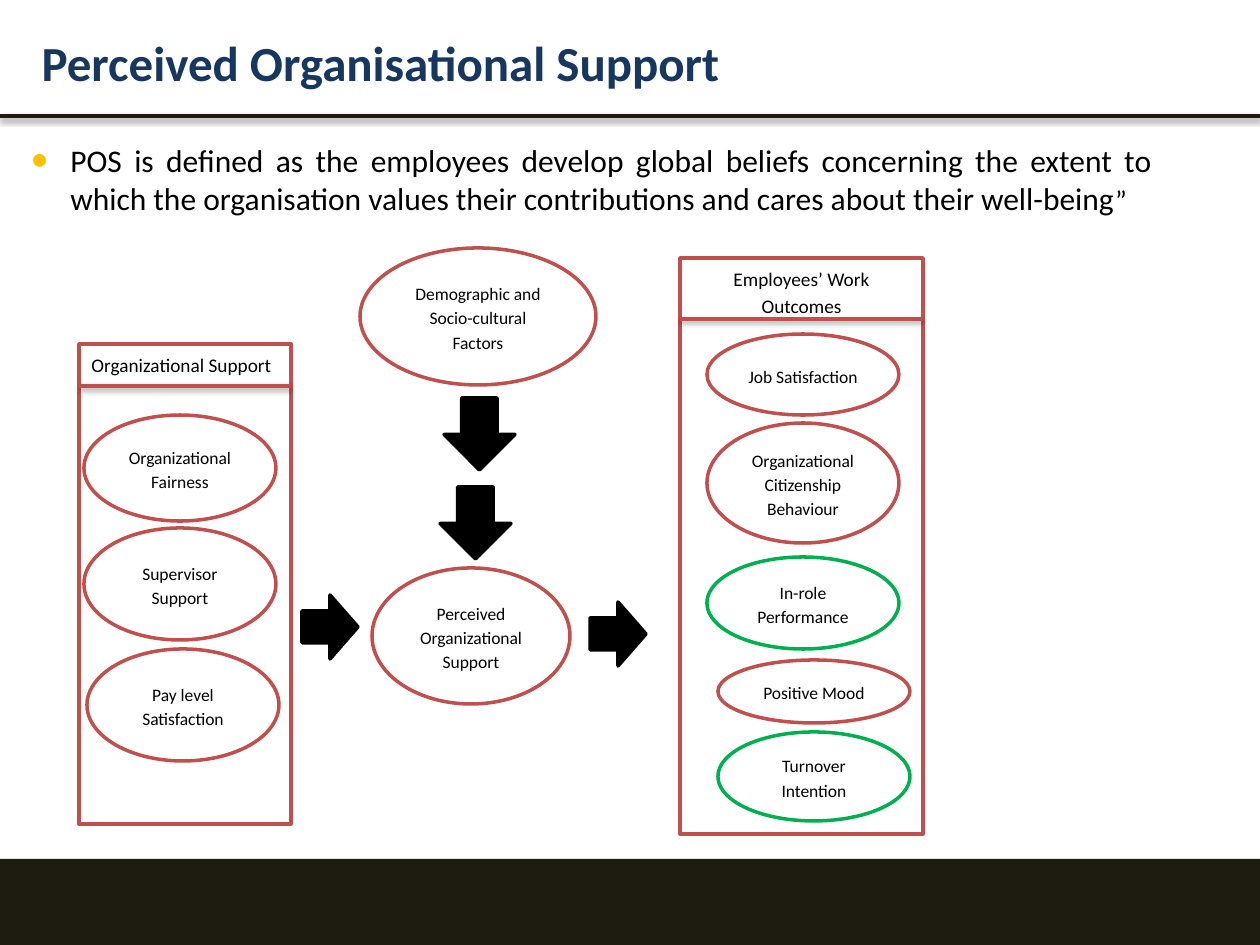
from dataclasses import dataclass

from lxml import etree
from pptx import Presentation
from pptx.dml.color import RGBColor
from pptx.enum.shapes import MSO_CONNECTOR, MSO_SHAPE
from pptx.enum.text import MSO_ANCHOR, PP_ALIGN
from pptx.oxml import parse_xml
from pptx.oxml.ns import nsdecls, qn
from pptx.util import Pt

RECT, OVAL = MSO_SHAPE.RECTANGLE, MSO_SHAPE.OVAL
RIGHT, DOWN = MSO_SHAPE.RIGHT_ARROW, MSO_SHAPE.DOWN_ARROW
STRAIGHT = MSO_CONNECTOR.STRAIGHT
TOP, MIDDLE = MSO_ANCHOR.TOP, MSO_ANCHOR.MIDDLE
LEFT, CENTER, JUSTIFY = PP_ALIGN.LEFT, PP_ALIGN.CENTER, PP_ALIGN.JUSTIFY
EMU_PER_PX = 914400 / 126


@dataclass(frozen=True)
class Theme:
    font: str = "Calibri"
    navy: str = "17375E"
    dark: str = "1E1C11"
    red: str = "C0504D"
    green: str = "00B050"
    gold: str = "FFC000"
    black: str = "000000"
    white: str = "FFFFFF"
    title: int = 28
    body: int = 18
    quote: int = 16
    header: int = 11
    label: int = 10
    line: int = 2


def px(*values):
    return [round(v * EMU_PER_PX) for v in values]


def assign(target, values):
    for name, value in values.items():
        setattr(target, name, value)


class Deck:
    def __init__(self, theme):
        self.theme = theme
        self.prs = Presentation()
        self.prs.slide_width, self.prs.slide_height = px(1260, 945)
        self.s = self.prs.slides.add_slide(self.prs.slide_layouts[5])

    def run(self, p, text, size, color, bold=False):
        r = p.add_run()
        r.text = text
        assign(r.font, {"name": self.theme.font, "size": Pt(size), "bold": bold})
        r.font.color.rgb = RGBColor.from_string(color)

    def title(self, text, box):
        sp = self.s.shapes.title
        assign(sp, dict(zip(("left", "top", "width", "height"), px(*box))))
        tf = sp.text_frame
        assign(tf, {"word_wrap": True, "vertical_anchor": TOP})
        p = tf.paragraphs[0]
        p.alignment = LEFT
        self.run(p, text, self.theme.title, self.theme.navy, True)

    def bullet(self, runs, box):
        tf = self.s.shapes.add_textbox(*px(*box)).text_frame
        tf.word_wrap = True
        p = tf.paragraphs[0]
        p.alignment = JUSTIFY
        pPr = p._p.get_or_add_pPr()
        indent = px(39)[0]
        pPr.set("marL", str(indent))
        pPr.set("indent", str(-indent))
        color = etree.SubElement(pPr, qn("a:buClr"))
        etree.SubElement(color, qn("a:srgbClr"), val=self.theme.gold)
        etree.SubElement(pPr, qn("a:buSzPct"), val="150000")
        etree.SubElement(pPr, qn("a:buFont"), typeface="Arial")
        etree.SubElement(pPr, qn("a:buChar"), char="•")
        for text, size in runs:
            self.run(p, text, size, self.theme.black)

    def shape(self, kind, box, fill, line=None):
        sp = self.s.shapes.add_shape(kind, *px(*box))
        sp.shadow.inherit = False
        sp.fill.solid()
        sp.fill.fore_color.rgb = RGBColor.from_string(fill)
        if line:
            sp.line.color.rgb = RGBColor.from_string(line)
            sp.line.width = Pt(self.theme.line)
        else:
            sp.line.fill.background()
        return sp

    def label(self, sp, text, size, align, anchor):
        tf = sp.text_frame
        assign(tf, {"word_wrap": True, "vertical_anchor": anchor})
        p = tf.paragraphs[0]
        assign(p, {"alignment": align, "line_spacing": 1.15, "space_after": Pt(10)})
        self.run(p, text, size, self.theme.black)

    def oval(self, text, box, color):
        sp = self.shape(OVAL, box, self.theme.white, color)
        self.label(sp, text, self.theme.label, CENTER, MIDDLE)

    def arrow(self, kind, box):
        self.shape(kind, box, self.theme.black, self.theme.black)

    def rule(self, x1, x2, y, color):
        line = self.s.shapes.add_connector(STRAIGHT, *px(x1, y, x2, y))
        line.line.color.rgb = RGBColor.from_string(color)
        line.line.width = Pt(self.theme.line)
        line._element.spPr.append(parse_xml(
            f'<a:effectLst {nsdecls("a")}><a:outerShdw blurRad="40000" dist="20000" '
            f'dir="5400000" rotWithShape="0"><a:srgbClr val="{self.theme.black}">'
            '<a:alpha val="38000"/></a:srgbClr></a:outerShdw></a:effectLst>'))

    def panel(self, header, box, rule_y, align):
        sp = self.shape(RECT, box, self.theme.white, self.theme.red)
        self.label(sp, header, self.theme.header, align, TOP)
        self.rule(box[0], box[0] + box[2], rule_y, self.theme.red)


def main():
    t = Theme()
    deck = Deck(t)
    deck.rule(0, 1260, 116, t.dark)
    deck.shape(RECT, (0, 859, 1260, 86), t.dark)
    deck.title("Perceived Organisational Support", (29, 26, 1106, 72))
    deck.bullet([
        ("POS is defined as the employees develop global beliefs concerning the extent "
         "to which the organisation values their contributions and cares about their "
         "well-being", t.body),
        ("”", t.quote),
    ], (19, 135, 1146, 123))

    deck.panel("Organizational Support", (79, 344, 212, 480), 386, LEFT)
    deck.panel("Employees’ Work Outcomes", (680, 258, 243, 576), 319, CENTER)

    ovals = [
        ("Organizational Fairness", (84, 415, 192, 106), t.red),
        ("Supervisor Support", (84, 528, 192, 112), t.red),
        ("Pay level Satisfaction", (87, 649, 192, 112), t.red),
        ("Demographic and Socio-cultural Factors", (360, 248, 236, 137), t.red),
        ("Perceived Organizational Support", (372, 568, 198, 136), t.red),
        ("Job Satisfaction", (707, 334, 192, 81), t.red),
        ("Organizational Citizenship Behaviour", (707, 423, 192, 120), t.red),
        ("In-role Performance", (707, 557, 192, 92), t.green),
        ("Positive Mood", (718, 660, 192, 63), t.red),
        ("Turnover Intention", (718, 732, 192, 89), t.green),
    ]
    for text, box, color in ovals:
        deck.oval(text, box, color)

    for x, y in ((302, 595), (590, 602)):
        deck.arrow(RIGHT, (x, y, 56, 64))
    for x, y in ((444, 398), (440, 487)):
        deck.arrow(DOWN, (x, y, 71, 72))

    deck.prs.save("out.pptx")


if __name__ == "__main__":
    main()
